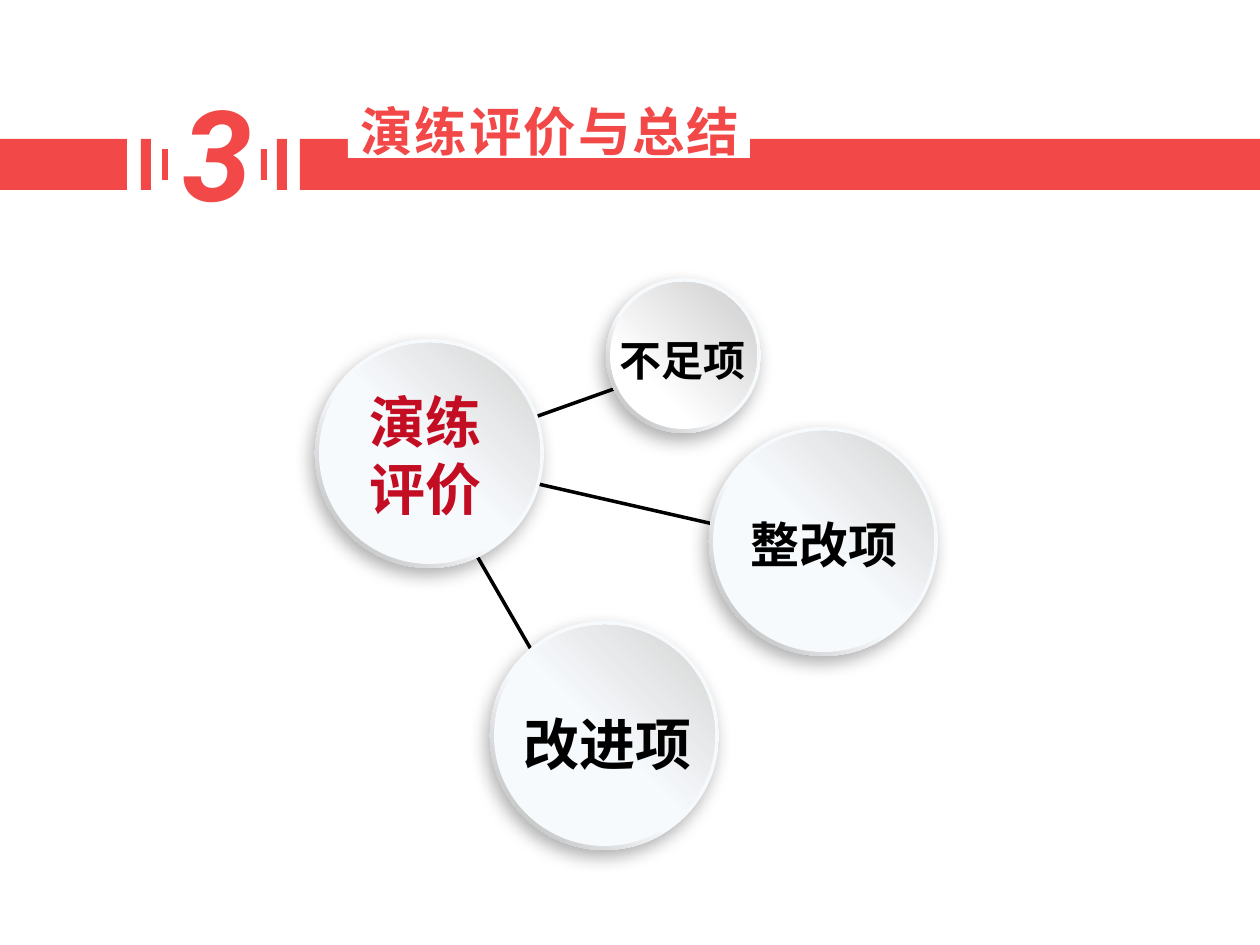
from lxml import etree
from pptx import Presentation, util as u
from pptx.dml.color import RGBColor
from pptx.enum import shapes, text
from pptx.oxml import parse_xml
from pptx.oxml.ns import nsdecls, qn

EMU_PER_PX = 914400 / 126
COLORS = {
    "red": "F24848", "crimson": "C30D23", "black": "000000", "white": "FFFFFF",
    "ice": "F7FAFD", "light": "D9D9D9", "mid": "BFBFBF", "dark": "A6A6A6",
}
CJK_FONT = "Noto Sans CJK SC"
RIM_STOPS = [(57, "ice"), (92, "mid"), (100, "dark")]
FACE_STOPS = [(49, "ice"), (92, "light"), (100, "mid")]
SMALL_FACE_STOPS = [(28, "white"), (83, "light"), (100, "mid")]
RIM_WIDTH = 4


def px(*lengths):
    return [u.Emu(round(length * EMU_PER_PX)) for length in lengths]


def rgb(name):
    return RGBColor.from_string(COLORS[name])


def write(box, wording, size, color="black", font=CJK_FONT, italic=False,
          spacing=0, wrap=False, align=text.PP_ALIGN.CENTER):
    frame = box.text_frame
    frame.text = wording
    frame.word_wrap = wrap
    frame.auto_size = text.MSO_AUTO_SIZE.NONE
    frame.vertical_anchor = text.MSO_ANCHOR.TOP
    for paragraph in frame.paragraphs:
        paragraph.alignment = align
        for run in paragraph.runs:
            run.font.size = u.Pt(size)
            run.font.bold, run.font.italic = True, italic
            run.font.name = font
            run.font.color.rgb = rgb(color)
            props = run.font._element
            east_asian = etree.Element(qn("a:ea"), typeface=CJK_FONT)
            props.find(qn("a:latin")).addnext(east_asian)
            if spacing:
                props.set("spc", str(round(spacing * 100)))


def add_bar(slide, left, top, width, height, color="red"):
    bar = slide.shapes.add_shape(shapes.MSO_SHAPE.RECTANGLE,
                                 *px(left, top, width, height))
    bar.shadow.inherit = False
    bar.fill.solid()
    bar.fill.fore_color.rgb = rgb(color)
    bar.line.fill.background()


def add_label(slide, left, top, width, height, wording, size, **style):
    box = slide.shapes.add_textbox(*px(left, top, width, height))
    write(box, wording, size, **style)


def add_disc(slide, left, top, diameter, stops, angle):
    disc = slide.shapes.add_shape(shapes.MSO_SHAPE.OVAL,
                                  *px(left, top, diameter, diameter))
    disc.shadow.inherit = False
    disc.line.fill.background()
    stop_xml = "".join(
        f'<a:gs pos="{pos * 1000}"><a:srgbClr val="{COLORS[color]}"/></a:gs>'
        for pos, color in stops)
    gradient = parse_xml(
        f'<a:gradFill {nsdecls("a")} rotWithShape="1"><a:gsLst>{stop_xml}</a:gsLst>'
        f'<a:lin ang="{angle * 60000}" scaled="0"/></a:gradFill>')
    disc._element.spPr.find(qn("a:prstGeom")).addnext(gradient)
    return disc


def add_button(slide, left, top, diameter, face_stops):
    rim = add_disc(slide, left, top, diameter, RIM_STOPS, 135)
    shadow = parse_xml(
        f'<a:outerShdw {nsdecls("a")} blurRad="{u.Pt(10)}" dist="{u.Pt(5)}" '
        f'dir="{120 * 60000}" algn="ctr" rotWithShape="0">'
        f'<a:srgbClr val="{COLORS["black"]}"><a:alpha val="31000"/></a:srgbClr>'
        '</a:outerShdw>')
    rim._element.spPr.find(qn("a:effectLst")).append(shadow)
    add_disc(slide, left + RIM_WIDTH, top + RIM_WIDTH,
             diameter - 2 * RIM_WIDTH, face_stops, 315)


def add_link(slide, *ends):
    link = slide.shapes.add_connector(shapes.MSO_CONNECTOR.STRAIGHT, *px(*ends))
    link.line.color.rgb = rgb("black")
    link.line.width = u.Pt(2)
    etree.SubElement(link._element.spPr, qn("a:effectLst"))


def add_header(slide):
    # Red band with a white notch for the title
    add_bar(slide, 300, 139, 960, 51)
    add_bar(slide, 348, 79, 402, 79, "white")
    heading = slide.shapes.title
    slide.shapes._spTree.append(heading._element)
    heading.left, heading.top, heading.width, heading.height = px(348, 93, 421, 77)
    write(heading, "演练评价与总结", 30, color="red", font="DejaVu Sans",
          spacing=1.1, wrap=True, align=text.PP_ALIGN.LEFT)

    # Section number between short bars
    add_label(slide, 168, 69, 100, 165, "3", 72,
              color="red", font="Roboto", italic=True)
    add_bar(slide, 0, 139, 127, 51)
    for left in (141, 277):
        add_bar(slide, left, 139, 10, 51)
    for left in (162, 261):
        add_bar(slide, left, 149, 6, 31)


def add_diagram(slide):
    # Links lie behind the buttons
    for ends in ((684, 364, 451, 447), (814, 547, 433, 460), (547, 677, 462, 530)):
        add_link(slide, *ends)

    # Button place, face, label place, wording, style
    buttons = [
        ((606, 278, 155), SMALL_FACE_STOPS, (607, 328, 152, 63), "不足项", 24, "black"),
        ((490, 621, 229), FACE_STOPS, (510, 703, 195, 81), "改进项", 32, "black"),
        ((709, 427, 229), FACE_STOPS, (737, 508, 174, 72), "整改项", 28, "black"),
        ((315, 339, 229), FACE_STOPS, (356, 381, 139, 149), "演练\n评价", 32, "crimson"),
    ]
    for circle, face, place, wording, size, color in buttons:
        add_button(slide, *circle, face)
        add_label(slide, *place, wording, size, color=color)


def main():
    deck = Presentation()
    deck.slide_width, deck.slide_height = px(1260, 945)
    slide = deck.slides.add_slide(deck.slide_layouts[5])
    add_header(slide)
    add_diagram(slide)
    deck.save("out.pptx")


if __name__ == "__main__":
    main()
